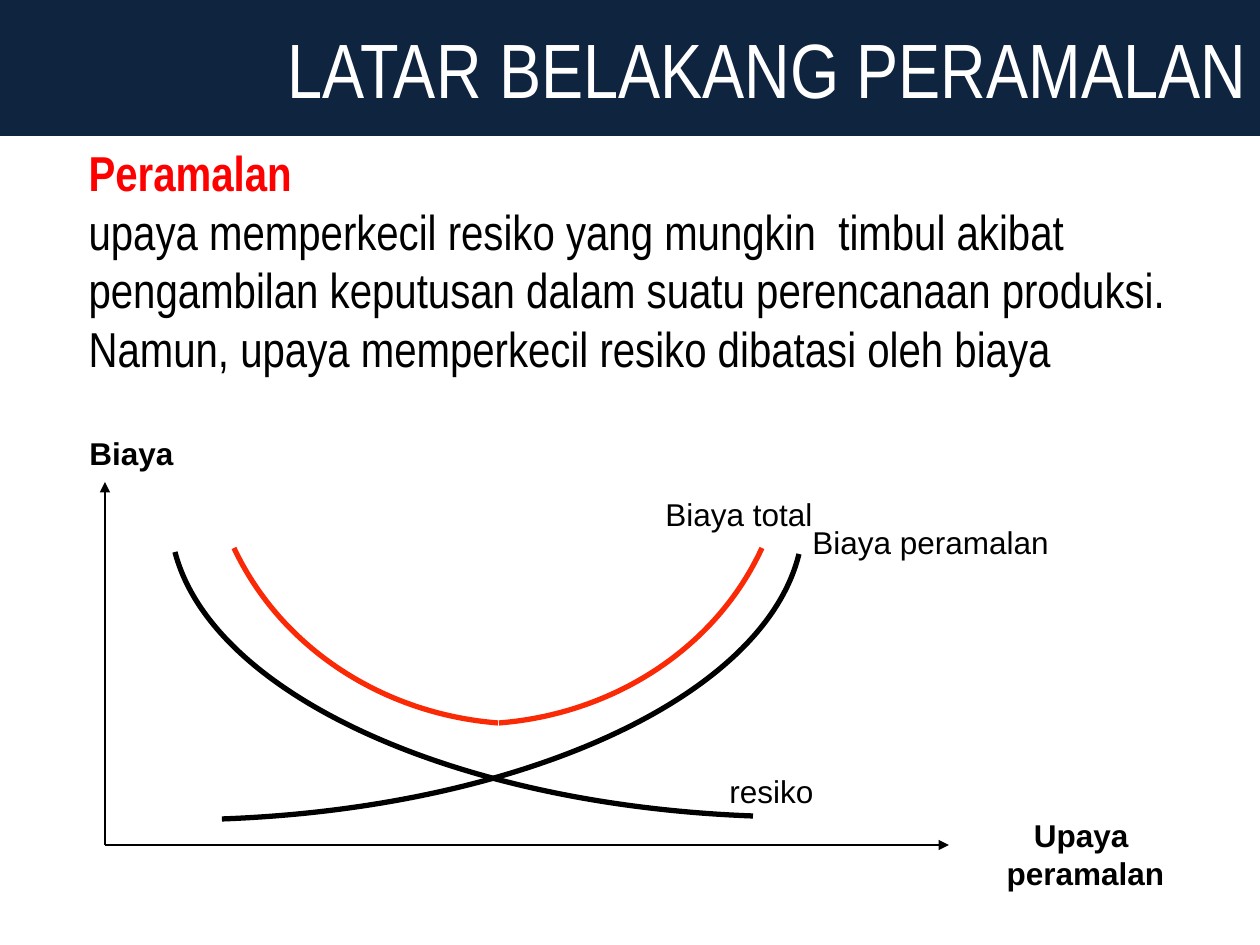
from typing import NamedTuple

from lxml.etree import SubElement
from pptx import Presentation
from pptx.dml.color import RGBColor
from pptx.enum.shapes import MSO_CONNECTOR
from pptx.enum.text import MSO_ANCHOR, MSO_AUTO_SIZE, PP_ALIGN
from pptx.oxml.ns import qn
from pptx.util import Emu, Pt

PX = 914400 / 126  # EMU in one px
NAVY = RGBColor(0x0F, 0x24, 0x3E)
WHITE = RGBColor(0xFF, 0xFF, 0xFF)
BLACK = RGBColor(0x00, 0x00, 0x00)
RED = RGBColor(0xFF, 0x00, 0x00)
ORANGE = RGBColor(0xFA, 0x29, 0x06)

Point = tuple[int, int]


class Curve(NamedTuple):
    """Cubic curve: start, two control points, end."""
    points: tuple[Point, Point, Point, Point]
    color: RGBColor


class Label(NamedTuple):
    lines: tuple[str, ...]
    box: tuple[int, int, int, int]
    bold: bool = False
    align: PP_ALIGN = PP_ALIGN.LEFT


ORIGIN = (105, 845)
AXIS_ENDS = ((105, 482), (949, 845))
CURVES = (
    Curve(((175, 552), (212, 694), (454, 805), (753, 816)), BLACK),  # resiko
    Curve(((799, 554), (764, 697), (522, 808), (222, 819)), BLACK),  # peramalan
    Curve(((762, 548), (716, 648), (614, 714), (499, 723)), ORANGE),  # total, right
    Curve(((234, 548), (281, 648), (383, 714), (498, 723)), ORANGE),  # total, left
)
LABELS = (
    Label(("Biaya total",), (653, 489, 176, 45)),
    Label(("Biaya peramalan",), (800, 517, 306, 45)),
    Label(("Biaya",), (77, 428, 176, 50), bold=True),
    Label(("resiko",), (717, 766, 176, 45)),
    Label(("Upaya ", "peramalan"), (949, 810, 273, 89), True, PP_ALIGN.CENTER),
)


def px(n: float) -> Emu:
    return Emu(round(n * PX))


def place(sp, left: int, top: int, width: int, height: int) -> None:
    sp.left, sp.top, sp.width, sp.height = map(px, (left, top, width, height))


def add_run(p, text: str, font: str, size: int, color: RGBColor, bold: bool = False) -> None:
    r = p.add_run()
    r.text = text
    r.font.name, r.font.size, r.font.bold = font, Pt(size), bold
    r.font.color.rgb = color


def draw_axis(shapes, end: Point) -> None:
    line = shapes.add_connector(MSO_CONNECTOR.STRAIGHT, *map(px, ORIGIN + end))
    line.line.color.rgb = BLACK
    line.line.width = Pt(0.75)
    SubElement(line.line._get_or_add_ln(), qn("a:tailEnd"), type="triangle")
    SubElement(line._element.spPr, qn("a:effectLst"))


def draw_curve(shapes, curve: Curve) -> None:
    start, *rest = ((px(x), px(y)) for x, y in curve.points)
    builder = shapes.build_freeform(*start)
    builder.add_line_segments(rest, close=False)
    sp = builder.convert_to_shape()
    # Join the three segments into one Bézier segment
    path = next(sp._element.iter(qn("a:path")))
    segments = path.findall(qn("a:lnTo"))
    bezier = SubElement(path, qn("a:cubicBezTo"))
    for segment in segments:
        bezier.append(segment[0])
        path.remove(segment)
    sp.shadow.inherit = False
    sp.fill.background()
    sp.line.color.rgb = curve.color
    sp.line.width = Pt(3)


def draw_label(shapes, label: Label) -> None:
    tf = shapes.add_textbox(*map(px, label.box)).text_frame
    tf.word_wrap = True
    for i, text in enumerate(label.lines):
        p = tf.add_paragraph() if i else tf.paragraphs[0]
        p.alignment = label.align
        add_run(p, text, "Arial", 18, BLACK, label.bold)


def fill_title(sp) -> None:
    place(sp, 0, 0, 1260, 136)
    sp.fill.solid()
    sp.fill.fore_color.rgb = NAVY
    tf = sp.text_frame
    tf.auto_size = MSO_AUTO_SIZE.NONE
    tf.vertical_anchor = MSO_ANCHOR.MIDDLE
    p = tf.paragraphs[0]
    p.alignment = PP_ALIGN.RIGHT
    add_run(p, "LATAR BELAKANG PERAMALAN", "Arial Narrow", 44, WHITE)


def fill_body(sp) -> None:
    place(sp, 53, 136, 1155, 310)
    tf = sp.text_frame
    tf.auto_size = MSO_AUTO_SIZE.NONE
    texts = (
        ("Peramalan", RED, True),
        ("upaya memperkecil resiko yang mungkin  timbul akibat pengambilan keputusan "
         "dalam suatu perencanaan produksi.  Namun, upaya memperkecil resiko dibatasi "
         "oleh biaya", BLACK, False),
    )
    for i, (text, color, bold) in enumerate(texts):
        p = tf.add_paragraph() if i else tf.paragraphs[0]
        pPr = p._p.get_or_add_pPr()
        pPr.set("marL", str(px(23)))
        pPr.set("indent", "0")
        SubElement(pPr, qn("a:buNone"))
        p.space_before = Pt(0)
        add_run(p, text, "Arial Narrow", 28, color, bold)


def main() -> None:
    prs = Presentation()
    prs.slide_width, prs.slide_height = px(1260), px(945)
    slide = prs.slides.add_slide(prs.slide_layouts[1])

    # Heading and definition
    fill_title(slide.shapes.title)
    fill_body(slide.placeholders[1])

    # Cost diagram
    for end in AXIS_ENDS:
        draw_axis(slide.shapes, end)
    for curve in CURVES:
        draw_curve(slide.shapes, curve)
    for label in LABELS:
        draw_label(slide.shapes, label)

    prs.save("out.pptx")


if __name__ == "__main__":
    main()
